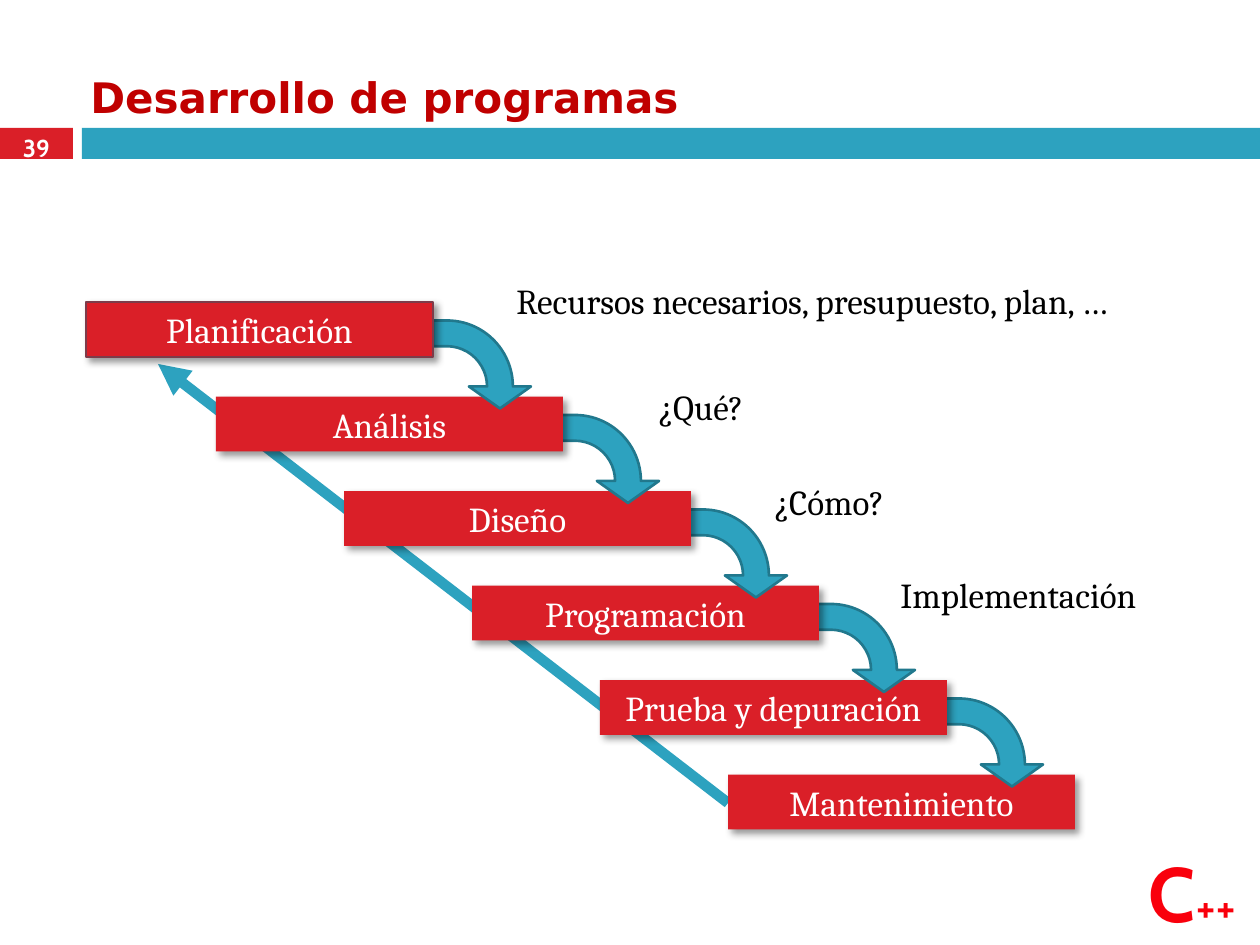
from collections import namedtuple
from dataclasses import dataclass

from lxml import etree
from pptx import Presentation, util as u
from pptx.dml.color import RGBColor
from pptx.enum import shapes, text
from pptx.oxml import ns

EMU_PER_PX = 914400 / 126
Box = namedtuple("Box", "x y w h")


@dataclass(frozen=True)
class Theme:
    red: str = "DA1F28"
    teal: str = "2DA2BF"
    teal_edge: str = "21788D"
    first_edge: str = "7D3C4A"
    title: str = "C00000"
    mark: str = "F9000C"
    white: str = "FFFFFF"
    black: str = "000000"
    body_font: str = "Cambria"
    title_font: str = "DejaVu Sans"
    mark_font: str = "Cabin"
    body_size: int = 20
    title_size: int = 24
    number_size: int = 14
    mark_size: int = 44
    plus_size: int = 24


THEME = Theme()


def px(value):
    return u.Emu(round(value * EMU_PER_PX))


def place(box):
    return [px(value) for value in box]


def style(font, name, size, color, bold=False):
    font.name, font.size, font.bold = name, u.Pt(size), bold
    font.color.rgb = RGBColor.from_string(color)


def add_effects(shape, shadow=False):
    effects = etree.SubElement(shape._element.spPr, ns.qn("a:effectLst"))
    if shadow:
        outer = etree.SubElement(effects, ns.qn("a:outerShdw"), blurRad=str(u.Pt(4)),
                                 dist=str(u.Pt(3)), dir=str(45 * 60000), algn="tl", rotWithShape="0")
        color = etree.SubElement(outer, ns.qn("a:srgbClr"), val=THEME.black)
        etree.SubElement(color, ns.qn("a:alpha"), val="40000")


def add_filled(parent, kind, box, fill, edge=None, edge_width=1, shadow=False):
    shape = parent.add_shape(kind, *place(box))
    shape.fill.solid()
    shape.fill.fore_color.rgb = RGBColor.from_string(fill)
    if edge:
        shape.line.color.rgb = RGBColor.from_string(edge)
        shape.line.width = u.Pt(edge_width)
    else:
        shape.line.fill.background()
    add_effects(shape, shadow)
    return shape


def add_label(slide, box, words, wrap=True, anchor=text.MSO_ANCHOR.TOP):
    frame = slide.shapes.add_textbox(*place(box)).text_frame
    frame.word_wrap = wrap
    frame.vertical_anchor = anchor
    paragraph = frame.paragraphs[0]
    paragraph.text = words
    return paragraph


def header(slide, box, title, number):
    rect = shapes.MSO_SHAPE.RECTANGLE
    band_y = box.y + 89
    add_filled(slide.shapes, rect, Box(box.x, band_y, 73, 31), THEME.red)
    add_filled(slide.shapes, rect, Box(box.x + 82, band_y, box.w - 82, 31), THEME.teal)
    page = add_label(slide, Box(box.x, band_y, 73, 39), number, anchor=text.MSO_ANCHOR.MIDDLE)
    page.alignment = text.PP_ALIGN.CENTER
    style(page.font, THEME.mark_font, THEME.number_size, THEME.white, True)
    heading = add_label(slide, Box(box.x + 78, box.y, 1143, 89), title, anchor=text.MSO_ANCHOR.BOTTOM)
    style(heading.font, THEME.title_font, THEME.title_size, THEME.title, True)


def language_mark(slide, box):
    mark = add_label(slide, box, "")
    mark.alignment = text.PP_ALIGN.CENTER
    for letters, size in (("C", THEME.mark_size), ("++", THEME.plus_size)):
        run = mark.add_run()
        run.text = letters
        style(run.font, THEME.mark_font, size, THEME.mark, True)
        run.font._element.set("spc", "50")


def feedback_arrow(slide, start, end):
    arrow = slide.shapes.add_connector(shapes.MSO_CONNECTOR.STRAIGHT, *place(start + end))
    arrow.line.color.rgb = RGBColor.from_string(THEME.teal)
    arrow.line.width = u.Pt(6)
    etree.SubElement(arrow.line._get_or_add_ln(), ns.qn("a:tailEnd"), type="triangle")
    add_effects(arrow)


def stage(parent, box, name, edge=None):
    bar = add_filled(parent, shapes.MSO_SHAPE.RECTANGLE, box, THEME.red, edge, 0.79, shadow=True)
    frame = bar.text_frame
    frame.word_wrap = False
    frame.vertical_anchor = text.MSO_ANCHOR.MIDDLE
    caption = frame.paragraphs[0]
    caption.text = name
    caption.alignment = text.PP_ALIGN.CENTER
    style(caption.font, THEME.body_font, THEME.body_size, THEME.white)


def incoming_arrow(parent, box):
    arrow = add_filled(parent, shapes.MSO_SHAPE.BENT_ARROW, Box(box.x + 222, box.y - 81, 88, 98),
                       THEME.teal, THEME.teal_edge, 1.5)
    arrow.rotation = 90
    for index, value in enumerate((0.293, 0.353, 0.25, 0.75)):
        arrow.adjustments[index] = value


def waterfall(slide, box, stages, notes):
    feedback_arrow(slide, (box.x + 642, box.y + 501), (box.x + 72, box.y + 62))
    for index in reversed(range(len(stages))):
        bar = Box(box.x + 2 + 128 * index, box.y + 94.5 * index, 347, 55)
        if index:
            group = slide.shapes.add_group_shape().shapes
            stage(group, bar, stages[index])
            incoming_arrow(group, bar)
        else:
            stage(slide.shapes, bar._replace(x=box.x), stages[index], THEME.first_edge)
    for x, y, width, words in notes:
        note = add_label(slide, Box(box.x + x, box.y + y, width, 50), words, wrap=False)
        note.line_spacing = 0.9
        style(note.font, THEME.body_font, THEME.body_size, THEME.black)


def main():
    deck = Presentation()
    deck.slide_width, deck.slide_height = px(1260), px(945)
    slide = deck.slides.add_slide(deck.slide_layouts[6])
    header(slide, Box(0, 39, 1260, 120), "Desarrollo de programas", "39")
    language_mark(slide, Box(1124, 839, 136, 106))
    waterfall(
        slide, Box(86, 302, 990, 528),
        ["Planificación", "Análisis", "Diseño", "Programación", "Prueba y depuración", "Mantenimiento"],
        [(418, -24, 665, "Recursos necesarios, presupuesto, plan, …"),
         (560, 82, 116, "¿Qué?"),
         (676, 177, 142, "¿Cómo?"),
         (802, 270, 272, "Implementación")])
    deck.save("out.pptx")


if __name__ == "__main__":
    main()
